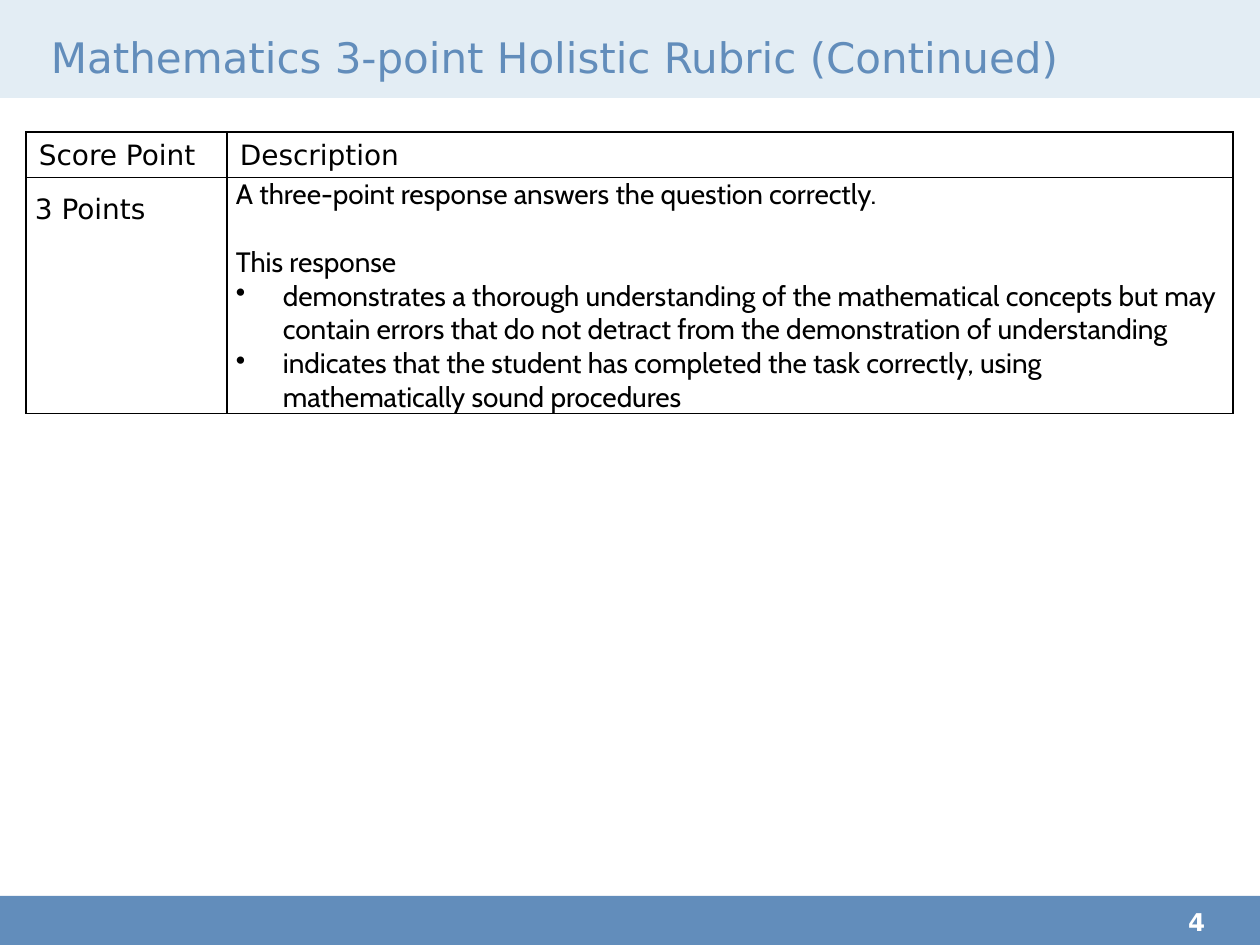
from lxml.etree import SubElement
from pptx import Presentation
from pptx.dml.color import RGBColor
from pptx.enum.shapes import MSO_SHAPE as Shape
from pptx.enum.text import MSO_ANCHOR as Anchor
from pptx.oxml import parse_xml
from pptx.oxml.ns import nsdecls, qn
from pptx.util import Emu, Pt

COLORS = {
    "blue": "628DBB",
    "pale": "E3EDF4",
    "white": "FFFFFF",
    "black": "000000",
}
HEADING_FONT, BODY_FONT = "DejaVu Sans", "Cabin"
BLANK_LAYOUT = 6
CELL_PAD = 9
BULLET_INDENT = 47
LINE_GAP = 34

HEADERS = ["Score Point", "Description"]
SCORE = "3 Points"
INTRO = ["A three-point response answers the question correctly.", "This response"]
CRITERIA = [
    "demonstrates a thorough understanding of the mathematical concepts but may "
    "contain errors that do not detract from the demonstration of understanding",
    "indicates that the student has completed the task correctly, using "
    "mathematically sound procedures",
]


def px(length):
    return Emu(round(length * 914400 / 126))


def rgb(name):
    return RGBColor.from_string(COLORS[name])


def add_band(slide, box, color):
    band = slide.shapes.add_shape(Shape.RECTANGLE, *map(px, box))
    band.shadow.inherit = False
    band.fill.solid()
    band.fill.fore_color.rgb = rgb(color)
    band.line.fill.background()


def style_text(frame, size, font, color, bold=False):
    for paragraph in frame.paragraphs:
        for run in paragraph.runs:
            run.font.size = Pt(size)
            run.font.name = font
            run.font.bold = bold
            run.font.color.rgb = rgb(color)


def set_margins(target, left, top, right, bottom):
    target.margin_left, target.margin_right = px(left), px(right)
    target.margin_top, target.margin_bottom = px(top), px(bottom)


def add_label(slide, box, text, size, color, anchor, bold=False):
    frame = slide.shapes.add_textbox(*map(px, box)).text_frame
    frame.word_wrap = True
    frame.vertical_anchor = anchor
    set_margins(frame, 0, 0, 0, 0)
    frame.text = text
    style_text(frame, size, HEADING_FONT, color, bold)


def add_header(slide, box):
    left, top, width, height = box
    add_band(slide, box, "pale")
    # White panel covers the lower part of the pale band
    add_band(slide, (left, top + 98, width, 108), "white")
    add_label(slide, (left + 51, top + 29, width - 126, 56),
              "Mathematics 3-point Holistic Rubric (Continued)",
              24, "blue", Anchor.MIDDLE)


def add_footer(slide, box):
    left, top, width, height = box
    add_band(slide, box, "blue")
    add_label(slide, (left + width - 72, top + 11, 72, height - 11),
              "4", 14, "white", Anchor.TOP, bold=True)


def add_borders(cell):
    properties = cell._tc.get_or_add_tcPr()
    for position, side in enumerate(("lnL", "lnR", "lnT", "lnB")):
        properties.insert(position, parse_xml(
            f'<a:{side} {nsdecls("a")} w="{Pt(1)}"><a:solidFill>'
            f'<a:srgbClr val="{COLORS["black"]}"/></a:solidFill></a:{side}>'))


def add_bullet(paragraph):
    properties = paragraph._p.get_or_add_pPr()
    properties.set("marL", str(px(BULLET_INDENT)))
    properties.set("indent", str(-px(BULLET_INDENT)))
    SubElement(properties, qn("a:buChar")).set("char", "•")


def add_rubric(slide, box):
    left, top, width, height = box
    table = slide.shapes.add_table(2, 2, *map(px, box)).table
    table.first_row = table.horz_banding = False
    score_width, header_height = 201, 45
    for column, size in zip(table.columns, (score_width, width - score_width)):
        column.width = px(size)
    for row, size in zip(table.rows, (header_height, height - header_height)):
        row.height = px(size)

    # Header row
    for column, heading in enumerate(HEADERS):
        cell = table.cell(0, column)
        cell.text_frame.text = heading
        cell.vertical_anchor = Anchor.BOTTOM
        set_margins(cell, 13, 6, 13, 6)

    # Score row
    score, description = table.cell(1, 0), table.cell(1, 1)
    score.text_frame.text = SCORE
    score.text_frame.paragraphs[0].line_spacing = 1.5
    description.text_frame.text = "\n".join(INTRO + CRITERIA)
    paragraphs = description.text_frame.paragraphs
    paragraphs[1].space_before = px(LINE_GAP)
    for paragraph in paragraphs[len(INTRO):]:
        add_bullet(paragraph)
    for cell in (score, description):
        set_margins(cell, CELL_PAD, 0, CELL_PAD, 0)

    # Shared cell look
    for cell in table.iter_cells():
        cell.fill.background()
        add_borders(cell)
        font = BODY_FONT if cell == description else HEADING_FONT
        style_text(cell.text_frame, 16, font, "black")
    style_text(description.text_frame, 16, BODY_FONT, "black")


def main():
    deck = Presentation()
    deck.slide_width, deck.slide_height = px(1260), px(945)
    slide = deck.slides.add_slide(deck.slide_layouts[BLANK_LAYOUT])
    add_footer(slide, (0, 896, 1260, 49))
    add_header(slide, (0, 0, 1260, 165))
    add_rubric(slide, (26, 132, 1207, 281))
    deck.save("out.pptx")


if __name__ == "__main__":
    main()
